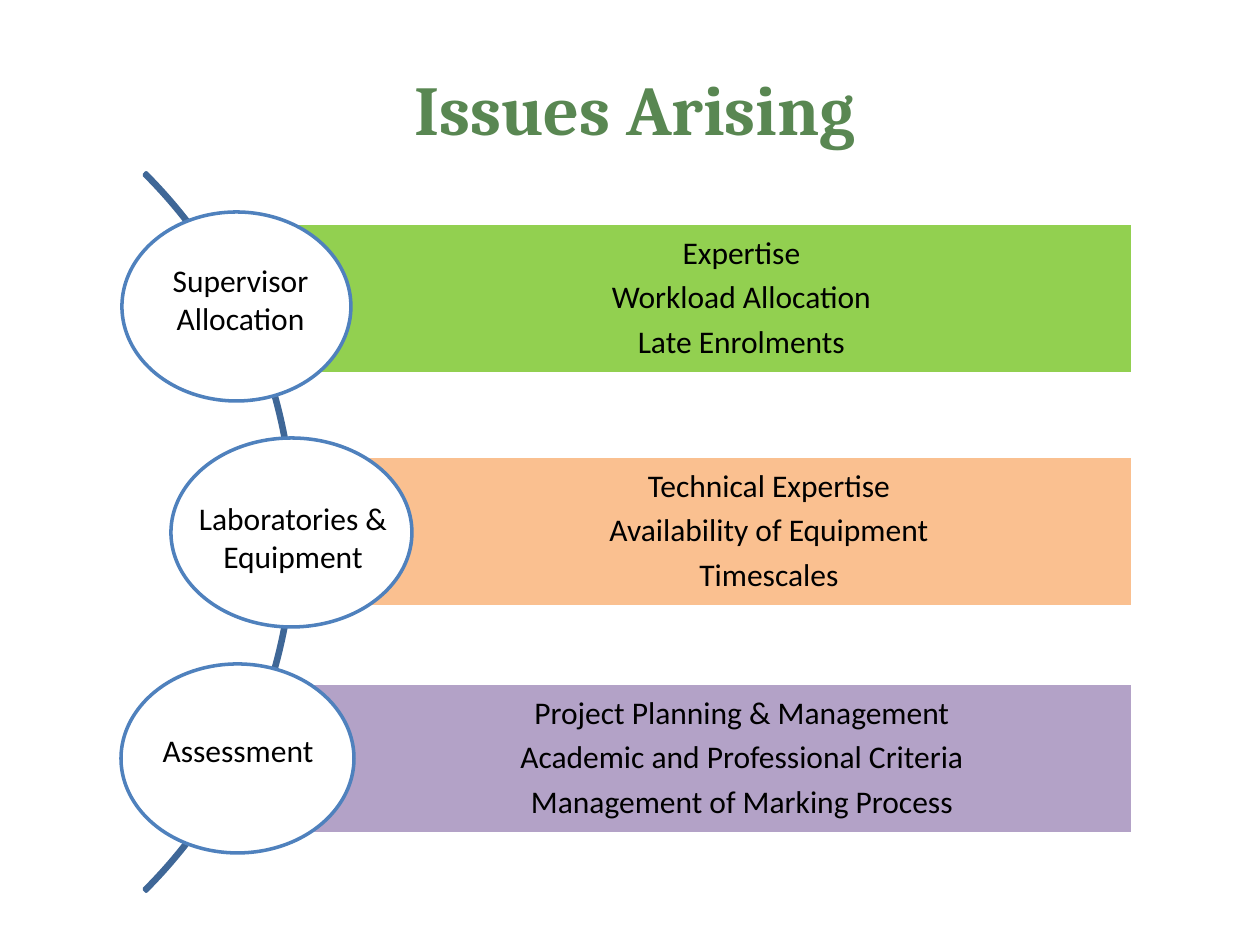
import pptx
import pptx.util
import pptx.dml.color
import pptx.enum.shapes
import pptx.enum.text

SHAPE = pptx.enum.shapes.MSO_SHAPE
ANCHOR = pptx.enum.text.MSO_ANCHOR
CENTER = pptx.enum.text.PP_ALIGN.CENTER
ISSUES = [
    ("Supervisor Allocation", "92D050", 236, (122, 229), (156, 255, 169, 89),
     ["Expertise", "Workload Allocation", "Late Enrolments"]),
    ("Laboratories & Equipment", "FAC090", 291, (171, 241), (184, 493, 218, 127),
     ["Technical Expertise", "Availability of Equipment", "Timescales"]),
    ("Assessment", "B3A2C7", 237, (121, 233), (121, 725, 234, 89),
     ["Project Planning & Management", "Academic and Professional Criteria",
      "Management of Marking Process"]),
]
BAR_TOPS = (223, 456, 683)
BAR_RIGHT, BAR_HEIGHT = 1133, 151
OVAL_TOP, OVAL_PITCH, OVAL_HEIGHT = 212, 226, 189


def px(n):
    return pptx.util.Emu(round(n * 914400 / 126))


def rgb(value):
    return pptx.dml.color.RGBColor.from_string(value)


class Deck:
    font = "Calibri"
    size = 18
    color = "000000"
    line_width = 2

    def __init__(self, width, height):
        self.prs = pptx.Presentation()
        self.prs.slide_width, self.prs.slide_height = px(width), px(height)
        self.s = self.prs.slides.add_slide(self.prs.slide_layouts[5])

    def fill_text(self, tf, lines, insets, anchor):
        tf.word_wrap = True
        tf.vertical_anchor = anchor
        tf.margin_left, tf.margin_top, tf.margin_right, tf.margin_bottom = map(px, insets)
        for i, line in enumerate(lines):
            p = tf.paragraphs[0] if i == 0 else tf.add_paragraph()
            p.text = line
            self.style(p, self.font, self.size, self.color)
        return tf.paragraphs

    def style(self, p, font, size, color, bold=False):
        p.alignment = CENTER
        p.font.name, p.font.size, p.font.bold = font, pptx.util.Pt(size), bold
        p.font.color.rgb = rgb(color)

    def title(self, text, box):
        sp = self.s.shapes.title
        sp.left, sp.top, sp.width, sp.height = map(px, box)
        p = self.fill_text(sp.text_frame, [text], (0, 0, 0, 0), ANCHOR.TOP)[0]
        sp.text_frame.auto_size = pptx.enum.text.MSO_AUTO_SIZE.NONE
        p.line_spacing = pptx.util.Pt(48)
        self.style(p, "Cambria", 40, "598752", True)

    def shape(self, kind, box, line, fill=None):
        sp = self.s.shapes.add_shape(kind, *map(px, box))
        sp.shadow.inherit = False
        if fill:
            sp.fill.solid()
            sp.fill.fore_color.rgb = rgb(fill)
        else:
            sp.fill.background()
        sp.line.color.rgb = rgb(line)
        sp.line.width = pptx.util.Pt(self.line_width)
        return sp

    def arc(self, box, line):
        sp = self.shape(SHAPE.BLOCK_ARC, box, line)
        for i, value in enumerate((189, 27, 0.003)):
            sp.adjustments[i] = value

    def bar(self, box, fill, lines):
        sp = self.shape(SHAPE.RECTANGLE, box, "FFFFFF", fill)
        for p in self.fill_text(sp.text_frame, lines, (120, 6, 6, 6), ANCHOR.MIDDLE):
            p.line_spacing = 0.9
            p.space_after = pptx.util.Pt(6)

    def oval(self, box):
        self.shape(SHAPE.OVAL, box, "4F81BD", "FFFFFF")

    def label(self, text, box):
        sp = self.s.shapes.add_textbox(*map(px, box))
        self.fill_text(sp.text_frame, [text], (12, 6, 12, 6), ANCHOR.TOP)


def main():
    deck = Deck(1260, 945)
    deck.title("Issues Arising", (74, 66, 1121, 110))
    deck.arc((-721, 24, 1016, 1016), "3F6797")
    for i, (name, fill, left, (oval_left, oval_width), label_box, lines) in enumerate(ISSUES):
        deck.bar((left, BAR_TOPS[i], BAR_RIGHT - left, BAR_HEIGHT), fill, lines)
        deck.oval((oval_left, OVAL_TOP + i * OVAL_PITCH, oval_width, OVAL_HEIGHT))
        deck.label(name, label_box)
    deck.prs.save("out.pptx")


if __name__ == "__main__":
    main()
